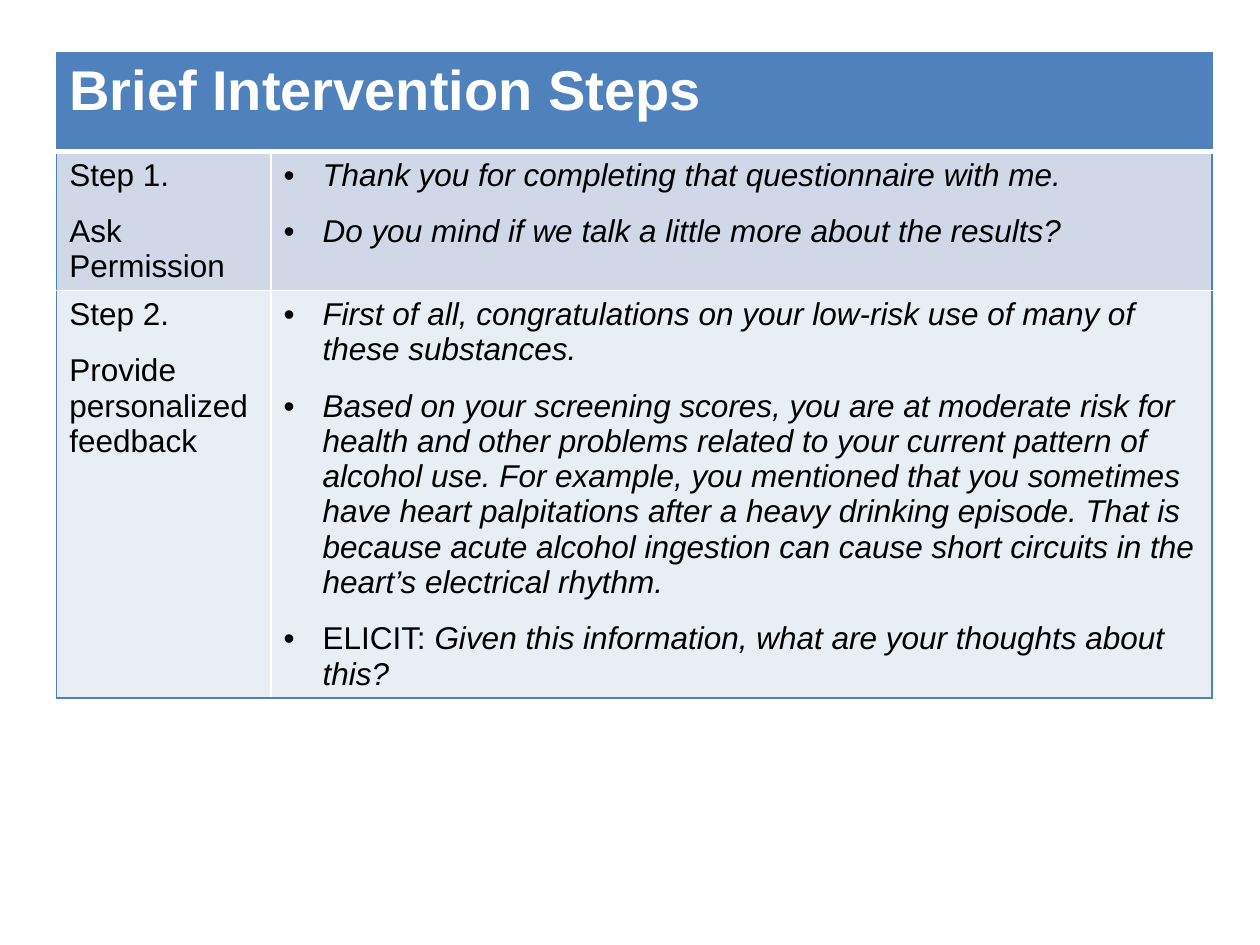
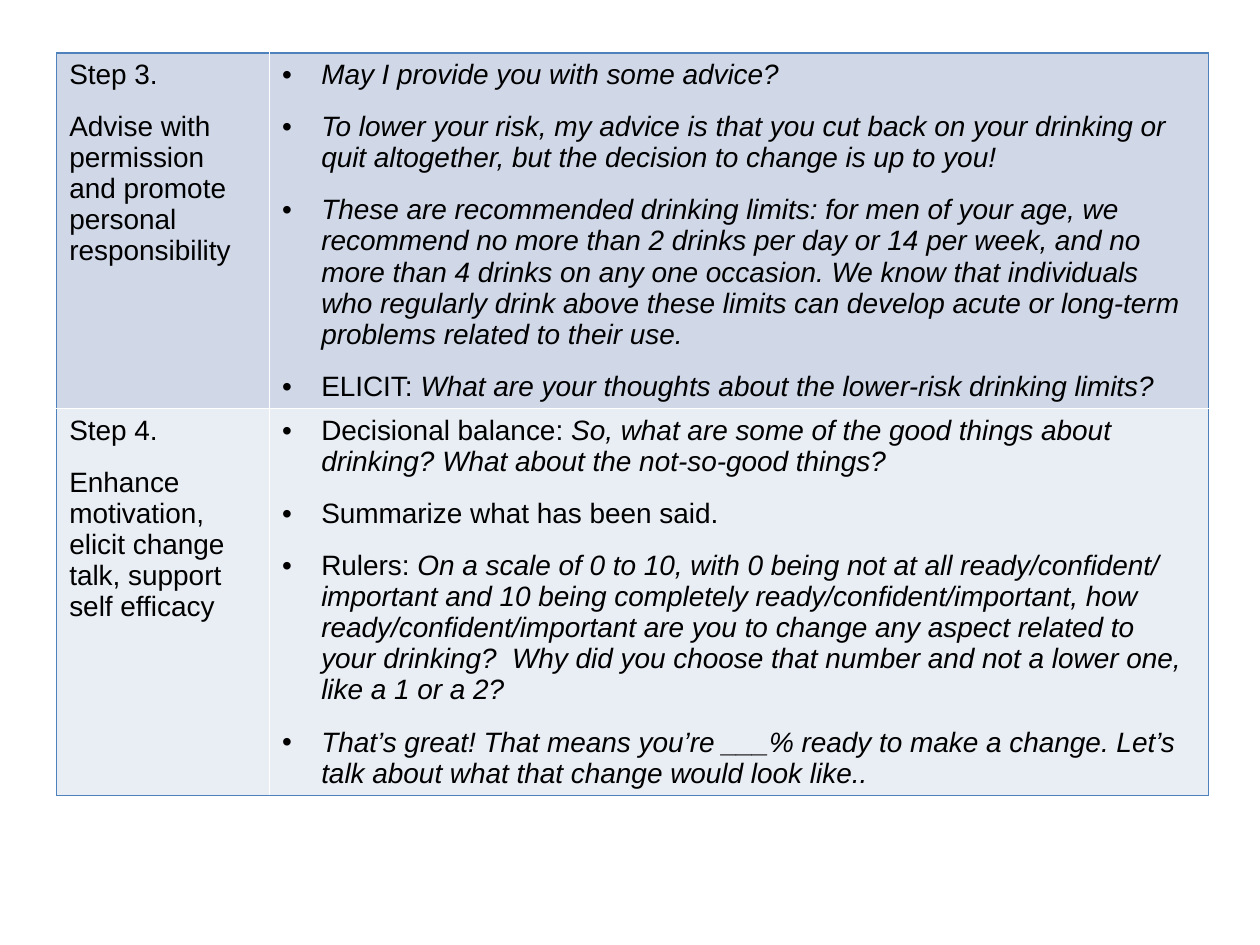
"""Build the two slides of brief intervention steps."""
from dataclasses import dataclass

from lxml import etree
from pptx import Presentation
from pptx.dml.color import RGBColor
from pptx.oxml.ns import qn
from pptx.util import Inches, Pt

FONT = "Arial"
BLUE, WHITE, BLACK = "4F81BD", "FFFFFF", "000000"
BANDS = ("D0D8E8", "E9EDF4")
LEFT, TOP = 0.45, 0.42
INDENT = Inches(0.31)
HEADER_HEIGHT, HEADER_SIZE = 0.78, 32


@dataclass(frozen=True)
class Line:
    """A bullet: an upright lead followed by an italic script."""

    lead: str = ""
    script: str = ""


@dataclass(frozen=True)
class Step:
    """One table row: step number, its goal and what to say."""

    number: str
    goal: str
    lines: tuple[Line, ...]
    height: float


@dataclass(frozen=True)
class StepTable:
    """The table on one slide."""

    steps: tuple[Step, ...]
    widths: tuple[float, float]
    size: int
    title: str = ""


TABLES = (
    StepTable(
        title="Brief Intervention Steps",
        widths=(1.7, 7.47),
        size=18,
        steps=(
            Step("Step 1.", "Ask Permission", (
                Line(script="Thank you for completing that questionnaire with me."),
                Line(script="Do you mind if we talk a little more about the results?"),
            ), 1.1),
            Step("Step 2.", "Provide personalized feedback", (
                Line(script="First of all, congratulations on your low-risk use of many of "
                            "these substances."),
                Line(script="Based on your screening scores, you are at moderate risk for "
                            "health and other problems related to your current pattern of "
                            "alcohol use. For example, you mentioned that you sometimes have "
                            "heart palpitations after a heavy drinking episode. That is "
                            "because acute alcohol ingestion can cause short circuits in the "
                            "heart’s electrical rhythm."),
                Line("ELICIT: ", "Given this information, what are your thoughts about this?"),
            ), 3.23),
        ),
    ),
    StepTable(
        widths=(1.69, 7.45),
        size=16,
        steps=(
            Step("Step 3.", "Advise with permission and promote personal responsibility", (
                Line(script="May I provide you with some advice?"),
                Line(script="To lower your risk, my advice is that you cut back on your "
                            "drinking or quit altogether, but the decision to change is up "
                            "to you!"),
                Line(script="These are recommended drinking limits: for men of your age, we "
                            "recommend no more than 2 drinks per day or 14 per week, and no "
                            "more than 4 drinks on any one occasion. We know that "
                            "individuals who regularly drink above these limits can develop "
                            "acute or long-term problems related to their use."),
                Line("ELICIT: ", "What are your thoughts about the lower-risk drinking limits?"),
            ), 2.82),
            Step("Step 4.", "Enhance motivation, elicit change talk, support self efficacy", (
                Line("Decisional balance: ", "So, what are some of the good things about "
                     "drinking? What about the not-so-good things?"),
                Line("Summarize what has been said."),
                Line("Rulers: ", "On a scale of 0 to 10, with 0 being not at all "
                     "ready/confident/ important and 10 being completely "
                     "ready/confident/important, how ready/confident/important are you to "
                     "change any aspect related to your drinking?  Why did you choose that "
                     "number and not a lower one, like a 1 or a 2?"),
                Line(script="That’s great! That means you’re ___% ready to make a change. "
                            "Let’s talk about what that change would look like.."),
            ), 3.07),
        ),
    ),
)


def rgb(color: str) -> RGBColor:
    """Turn a hex string into a colour."""
    return RGBColor.from_string(color)


def add_run(p, text: str, size: int, color: str = BLACK,
            bold: bool = False, italic: bool = False) -> None:
    """Add one styled run."""
    r = p.add_run()
    r.text = text
    r.font.name, r.font.size = FONT, Pt(size)
    r.font.bold, r.font.italic = bold, italic
    r.font.color.rgb = rgb(color)


def next_paragraph(cell, first: bool):
    """Return the cell's first paragraph or a new one, with even spacing."""
    tf = cell.text_frame
    p = tf.paragraphs[0] if first else tf.add_paragraph()
    p.space_before = p.space_after = Pt(6)
    return p


def add_bullet(p) -> None:
    """Give a paragraph a hanging bullet."""
    pPr = p._p.get_or_add_pPr()
    pPr.set("marL", str(INDENT))
    pPr.set("indent", str(-INDENT))
    etree.SubElement(pPr, qn("a:buFont"), typeface=FONT)
    etree.SubElement(pPr, qn("a:buChar"), char="•")


def style_cell(cell, fill: str, edges: dict[str, tuple[str, int]]) -> None:
    """Set the borders and then the fill of a cell."""
    tcPr = cell._tc.get_or_add_tcPr()
    for side in "LRTB":
        color, width = edges[side]
        ln = etree.SubElement(tcPr, qn(f"a:ln{side}"), w=str(Pt(width)))
        solid = etree.SubElement(ln, qn("a:solidFill"))
        etree.SubElement(solid, qn("a:srgbClr"), val=color)
    cell.fill.solid()
    cell.fill.fore_color.rgb = rgb(fill)


def add_header(tbl, title: str) -> None:
    """Fill the title row, which spans both columns."""
    for cell in tbl.rows[0].cells:
        style_cell(cell, BLUE, {**dict.fromkeys("LRT", (BLUE, 1)), "B": (WHITE, 3)})
    cell = tbl.cell(0, 0)
    cell.merge(tbl.cell(0, 1))
    add_run(next_paragraph(cell, True), title, HEADER_SIZE, WHITE, bold=True)


def add_step(cells, step: Step, size: int) -> None:
    """Write a step's name on the left and its bullets on the right."""
    label, speech = cells
    for i, text in enumerate((step.number, step.goal)):
        add_run(next_paragraph(label, i == 0), text, size)
    for i, line in enumerate(step.lines):
        p = next_paragraph(speech, i == 0)
        add_bullet(p)
        if line.lead:
            add_run(p, line.lead, size)
        if line.script:
            add_run(p, line.script, size, italic=True)


def add_step_table(s, data: StepTable) -> None:
    """Draw a slide's table with its optional title row."""
    heights = [HEADER_HEIGHT] if data.title else []
    start = len(heights)
    heights += [step.height for step in data.steps]
    tbl = s.shapes.add_table(len(heights), 2, Inches(LEFT), Inches(TOP),
                             Inches(sum(data.widths)), Inches(sum(heights))).table
    tbl.first_row = tbl.horz_banding = False
    for column, width in zip(tbl.columns, data.widths):
        column.width = Inches(width)
    for row, height in zip(tbl.rows, heights):
        row.height = Inches(height)
    if data.title:
        add_header(tbl, data.title)
    outer, inner = (BLUE, 1), (WHITE, 1)
    for i, step in enumerate(data.steps):
        cells = tuple(tbl.rows[start + i].cells)
        top = inner if i else ((WHITE, 3) if data.title else outer)
        bottom = outer if i == len(data.steps) - 1 else inner
        for cell, left, right in zip(cells, (outer, inner), (inner, outer)):
            style_cell(cell, BANDS[i % 2], {"L": left, "R": right, "T": top, "B": bottom})
        add_step(cells, step, data.size)


def main() -> None:
    """Build and save the presentation."""
    prs = Presentation()
    prs.slide_width, prs.slide_height = Inches(10), Inches(7.5)
    for data in TABLES:
        add_step_table(prs.slides.add_slide(prs.slide_layouts[6]), data)
    prs.save("out.pptx")


if __name__ == "__main__":
    main()
